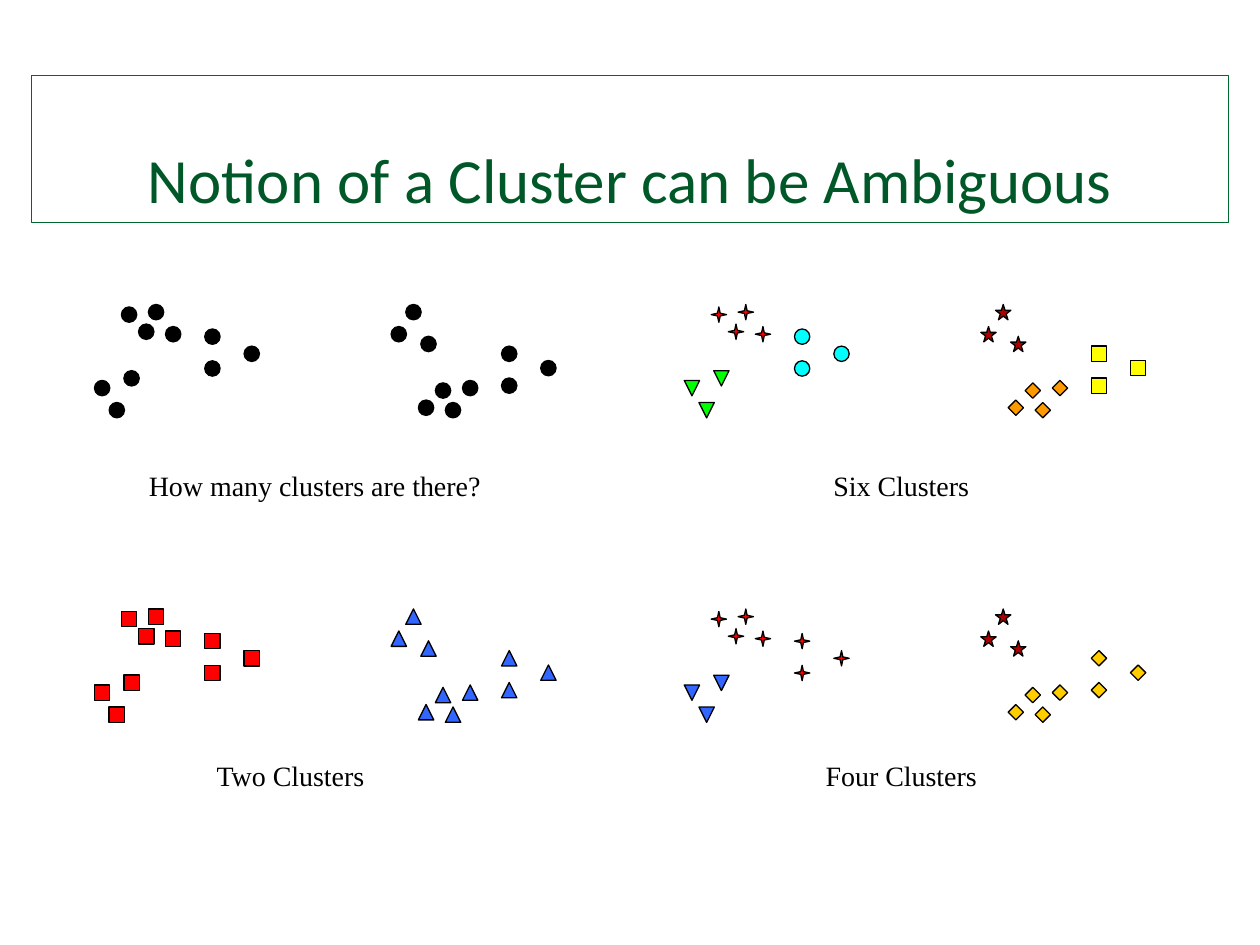
from dataclasses import dataclass

from pptx import Presentation
from pptx.dml.color import RGBColor
from pptx.enum import shapes, text
from pptx.util import Pt

COLORS = {
    "black": "000000", "red": "FF0000", "dark red": "AD0101", "blue": "3366FF",
    "green": "00FF00", "cyan": "00FFFF", "yellow": "FFFF00", "orange": "FF9900",
    "gold": "FFCC00", "title": "005828", "border": "00682F",
}
MARK = shapes.MSO_SHAPE
ALIGN = text.PP_ALIGN
MARKER_SIZE = 8.8
COLUMNS = (54, 391)
ROWS = (174, 348)

# Marker positions within one panel, in points
POINTS = {
    "right low": [(210.3, 43.4), (185.1, 54.6), (200.5, 56), (194.8, 44.8)],
    "right top": [(186.5, 18.2), (169.5, 12.6), (177.9, 0)],
    "right edge": [(232.6, 42), (255, 32), (232.6, 23.8)],
    "left top": [(40.6, 12.6), (15.4, 1.4), (30.8, 0), (25.2, 11.2)],
    "left low": [(16.8, 37.8), (0, 43.4), (8.4, 56)],
    "left edge": [(63, 14), (85.5, 23.8), (63, 32.2)],
}


@dataclass
class Marker:
    shape: shapes.MSO_SHAPE
    color: str
    rotation: int = 0


@dataclass
class Panel:
    column: int
    row: int
    caption: str
    caption_left: float
    caption_top: float
    caption_width: float
    align: text.PP_ALIGN
    markers: dict[str, Marker]


DOT = Marker(MARK.OVAL, "black")
SQUARE = Marker(MARK.RECTANGLE, "red")
TRIANGLE = Marker(MARK.ISOSCELES_TRIANGLE, "blue")
CROSS = Marker(MARK.STAR_4_POINT, "red")
STAR = Marker(MARK.STAR_5_POINT, "dark red")
GOLD_DIAMOND = Marker(MARK.DIAMOND, "gold")

PANELS = [
    Panel(0, 0, "How many clusters are there?", 78, 264, 210, ALIGN.LEFT,
          {name: DOT for name in POINTS}),
    Panel(1, 1, "Four Clusters ", 427, 430, 180, ALIGN.CENTER, {
        "right low": GOLD_DIAMOND, "right top": STAR, "right edge": GOLD_DIAMOND,
        "left top": CROSS, "left edge": CROSS,
        "left low": Marker(MARK.FLOWCHART_EXTRACT, "blue", 180)}),
    Panel(0, 1, "Two Clusters ", 78, 430, 180, ALIGN.CENTER,
          {name: TRIANGLE if name.startswith("right") else SQUARE for name in POINTS}),
    Panel(1, 0, "Six Clusters ", 427, 264, 180, ALIGN.CENTER, {
        "right low": Marker(MARK.DIAMOND, "orange"), "right top": STAR,
        "right edge": Marker(MARK.RECTANGLE, "yellow"), "left top": CROSS,
        "left low": Marker(MARK.ISOSCELES_TRIANGLE, "green", 180),
        "left edge": Marker(MARK.OVAL, "cyan")}),
]


def rgb(name: str) -> RGBColor:
    return RGBColor.from_string(COLORS[name])


def add_text(p, words: str, size: float, font: str, color: str, align) -> None:
    p.alignment = align
    r = p.add_run()
    r.text = words
    r.font.size = Pt(size)
    r.font.name = font
    r.font.color.rgb = rgb(color)


def draw_marker(group, marker: Marker, x: float, y: float) -> None:
    sp = group.shapes.add_shape(marker.shape, Pt(x), Pt(y), Pt(MARKER_SIZE), Pt(MARKER_SIZE))
    sp.shadow.inherit = False
    sp.rotation = marker.rotation
    sp.fill.solid()
    sp.fill.fore_color.rgb = rgb(marker.color)
    sp.line.color.rgb = rgb("black")
    sp.line.width = Pt(0.75)


def draw_panel(slide, panel: Panel) -> None:
    group = slide.shapes.add_group_shape()
    for name, points in POINTS.items():
        for dx, dy in points:
            draw_marker(group, panel.markers[name],
                        COLUMNS[panel.column] + dx, ROWS[panel.row] + dy)
    box = group.shapes.add_textbox(Pt(panel.caption_left), Pt(panel.caption_top),
                                   Pt(panel.caption_width), Pt(26.6))
    tf = box.text_frame
    tf.word_wrap = True
    tf.auto_size = text.MSO_AUTO_SIZE.SHAPE_TO_FIT_TEXT
    add_text(tf.paragraphs[0], panel.caption, 16, "Times New Roman", "black", panel.align)


def draw_title(slide) -> None:
    title = slide.shapes.title
    title.left, title.top, title.width, title.height = Pt(18), Pt(43), Pt(684), Pt(84)
    title.line.color.rgb = rgb("border")
    title.line.width = Pt(0.75)
    tf = title.text_frame
    tf.auto_size = text.MSO_AUTO_SIZE.NONE
    tf.vertical_anchor = text.MSO_ANCHOR.BOTTOM
    add_text(tf.paragraphs[0], "Notion of a Cluster can be Ambiguous",
             36, "Calibri", "title", ALIGN.CENTER)


def main() -> None:
    prs = Presentation()
    prs.slide_width, prs.slide_height = Pt(720), Pt(540)
    slide = prs.slides.add_slide(prs.slide_layouts[5])
    for panel in PANELS:
        draw_panel(slide, panel)
    draw_title(slide)
    prs.save("out.pptx")


if __name__ == "__main__":
    main()
